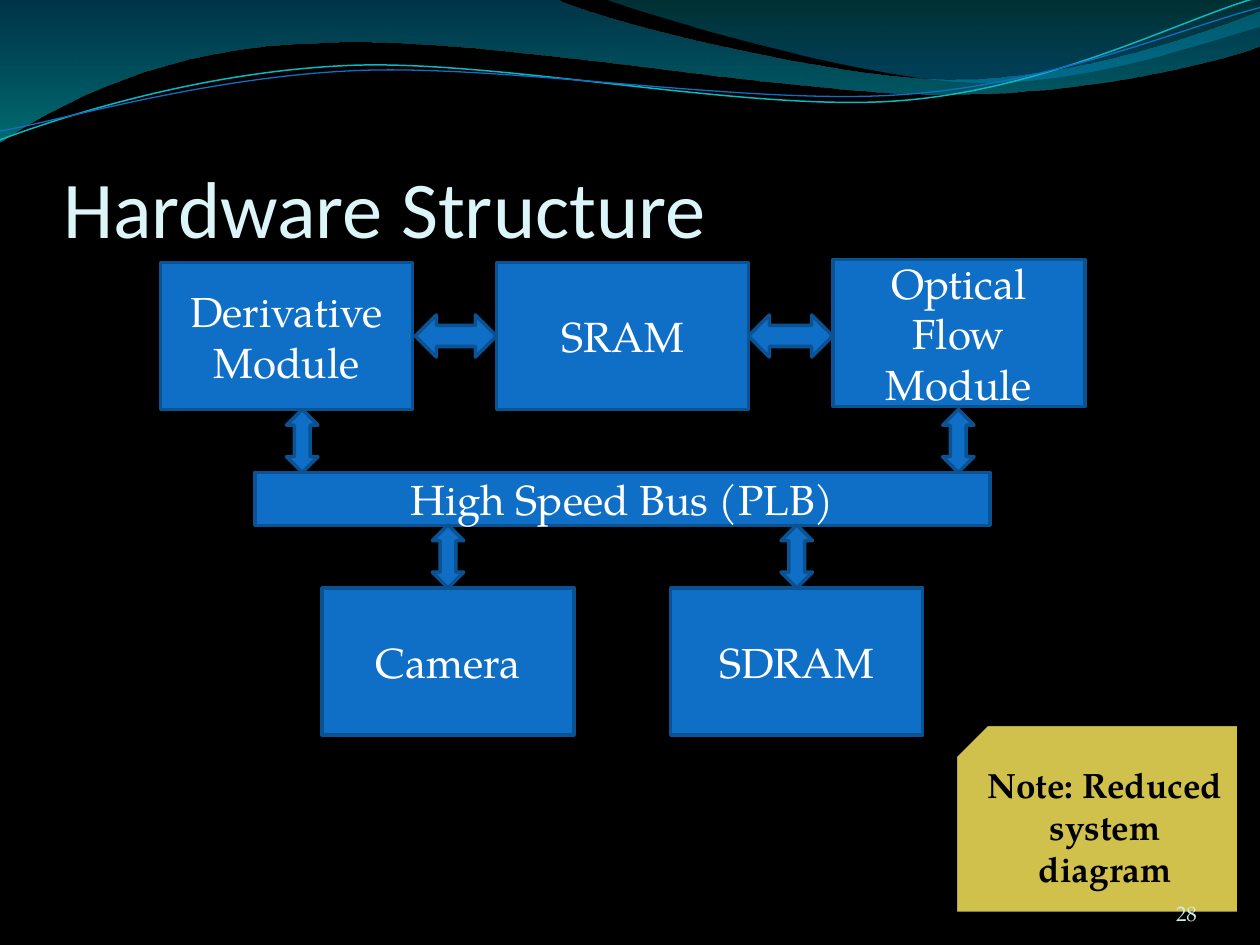
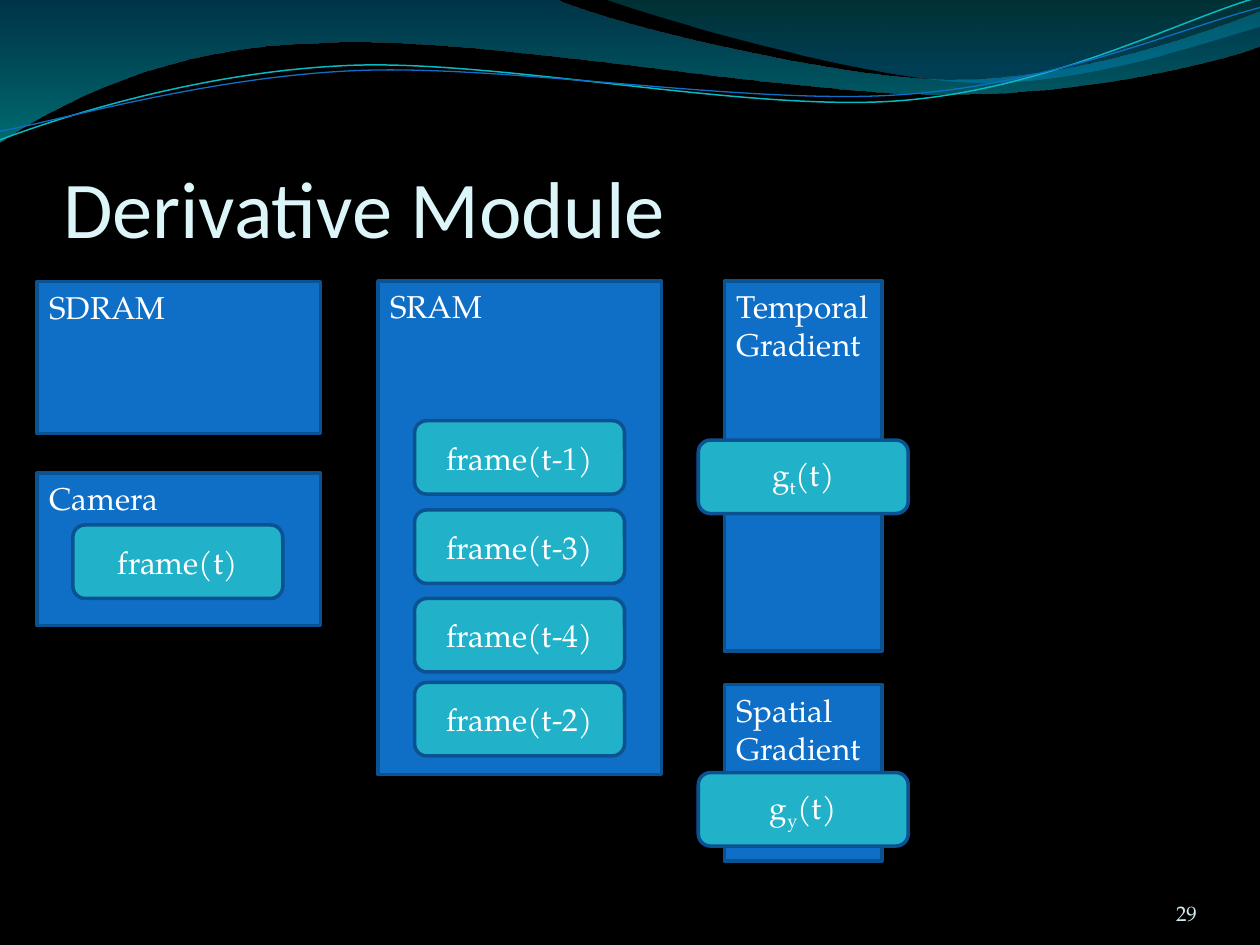
from math import cos, radians, sin

from lxml import etree
from pptx import Presentation
from pptx.dml.color import RGBColor
from pptx.enum.shapes import MSO_SHAPE
from pptx.enum.text import MSO_ANCHOR, MSO_AUTO_SIZE, PP_ALIGN
from pptx.oxml.ns import qn
from pptx.util import Pt

RECT, ROUND = MSO_SHAPE.RECTANGLE, MSO_SHAPE.ROUNDED_RECTANGLE
UP_DOWN, LEFT_RIGHT = MSO_SHAPE.UP_DOWN_ARROW, MSO_SHAPE.LEFT_RIGHT_ARROW
SNIP = MSO_SHAPE.SNIP_1_RECTANGLE
TOP, MIDDLE, BOTTOM = MSO_ANCHOR.TOP, MSO_ANCHOR.MIDDLE, MSO_ANCHOR.BOTTOM
LEFT, CENTER, RIGHT = PP_ALIGN.LEFT, PP_ALIGN.CENTER, PP_ALIGN.RIGHT
NO_FIT = MSO_AUTO_SIZE.NONE

BLACK, WHITE, BLUE, NAVY, TEAL = "000000", "FFFFFF", "0F6FC6", "0B5292", "21B2C9"
AQUA, SAND, TITLE, NUMBER = "0AB8BF", "D0C04C", "DBF5F9", "D1EAEE"
HEAD_FONT, BODY_FONT = "Calibri", "TeX Gyre Pagella"
TILT = 2.7

BROAD_WAVE = [(0, 0), (316.8, -0.7),
              (342.7, 12.2, 478.1, 45.4, 545.8, 45.4),
              (614.2, 45.4, 689.8, 18.7, 720, 6.5), (720.7, 25.9),
              (707.8, 31.7, 626.4, 54.7, 537.1, 54),
              (447.8, 54, 275, 20.2, 185, 24.5),
              (92.9, 25.9, 33.1, 59.8, -0.7, 81.4), (0, 0)]
RIGHT_WAVE = [(344.9, -0.7), (366.5, 7.9, 491, 44.6, 553.7, 46.8),
              (616.3, 49.7, 691.9, 23, 720, 15.1), (720, 0), (344.9, -0.7)]
AQUA_LINE = [(0, 79.9), (34.6, 67, 113.8, 41, 199.4, 37.4),
             (284.4, 33.8, 427, 64.1, 513.4, 57.6),
             (599.8, 51.1, 675.4, 10.8, 718.6, -1.4)]
BLUE_LINE = [(0, 74.9), (33.8, 69.1, 118.1, 43.9, 203.8, 40.3),
             (290.2, 36.7, 429.8, 60.5, 516.2, 54),
             (601.9, 48.2, 677.5, 15.1, 720, 4.3)]


def rgb(value):
    return RGBColor.from_string(value)


def turn(x, y, cx, cy, degrees):
    a = radians(degrees)
    dx, dy = x - cx, y - cy
    return cx + dx * cos(a) - dy * sin(a), cy + dx * sin(a) + dy * cos(a)


class Deck:
    def __init__(self):
        self.prs = Presentation()
        self.prs.slide_width, self.prs.slide_height = Pt(720), Pt(540)
        fill = self.prs.slide_master.background.fill
        fill.solid()
        fill.fore_color.rgb = rgb(BLACK)

    def slide(self, title):
        self.s = self.prs.slides.add_slide(self.prs.slide_layouts[5])
        self.wave(BROAD_WAVE, [(0, "0074A1", 45), (1, "00C6CF", 55)])
        self.wave(RIGHT_WAVE, [(0, "00A1A9", 30), (0.8, "008BBF", 45)])
        self.curve(AQUA_LINE, AQUA, 0.85, 41.4)
        self.curve(BLUE_LINE, BLUE, 0.75, 42.5)
        sp = self.s.shapes.title
        sp.left, sp.top, sp.width, sp.height = Pt(36), Pt(55.4), Pt(648), Pt(90)
        self.margins(sp, 0, 3.6, 0, 0)
        self.text(sp, title, 46, TITLE, BOTTOM, LEFT, font=HEAD_FONT)

    def freeform(self, segments, close, tilt=0, middle=0):
        points = [turn(*seg[i:i + 2], 359.3, middle, tilt)
                  for seg in segments for i in range(0, len(seg), 2)]
        points = [(Pt(x), Pt(y)) for x, y in points]
        builder = self.s.shapes.build_freeform(*points[0])
        builder.add_line_segments(points[1:], close=close)
        sp = builder.convert_to_shape()
        sp.shadow.inherit = False
        lines = iter(list(sp._element.spPr.iter(qn("a:lnTo"))))
        for seg in segments[1:]:
            first = next(lines)
            if len(seg) == 6:
                first.tag = qn("a:cubicBezTo")
                for _ in range(2):
                    control = next(lines)
                    first.append(control[0])
                    control.getparent().remove(control)
        return sp

    def wave(self, segments, stops):
        sp = self.freeform(segments, True)
        sp.line.fill.background()
        sp.fill.gradient()
        sp.fill.gradient_angle = 270
        for stop, (position, color, _) in zip(sp.fill.gradient_stops, stops):
            stop.position = position
            stop.color.rgb = rgb(color)
        for clr, (_, _, opacity) in zip(sp._element.spPr.iter(qn("a:srgbClr")), stops):
            etree.SubElement(clr, qn("a:alpha")).set("val", str(opacity * 1000))

    def curve(self, segments, color, width, middle):
        sp = self.freeform(segments, False, TILT, middle)
        sp.rotation = -TILT
        sp.fill.background()
        sp.line.color.rgb = rgb(color)
        sp.line.width = Pt(width)

    def margins(self, sp, left, top, right, bottom):
        tf = sp.text_frame
        tf.margin_left, tf.margin_top = Pt(left), Pt(top)
        tf.margin_right, tf.margin_bottom = Pt(right), Pt(bottom)

    def text(self, sp, text, size, color, anchor, align, bold=False, font=BODY_FONT):
        tf = sp.text_frame
        tf.word_wrap, tf.auto_size, tf.vertical_anchor = True, NO_FIT, anchor
        p = tf.paragraphs[0]
        p.alignment = align
        for i, part in enumerate(text.split("_")):
            r = p.add_run()
            r.text = part
            r.font.name, r.font.size, r.font.bold = font, Pt(size), bold
            r.font.color.rgb = rgb(color)
            if i % 2:
                r._r.get_or_add_rPr().set("baseline", "-25000")

    def shape(self, kind, x, y, w, h, fill=BLUE, line=NAVY):
        sp = self.s.shapes.add_shape(kind, Pt(x), Pt(y), Pt(w), Pt(h))
        sp.shadow.inherit = False
        sp.fill.solid()
        sp.fill.fore_color.rgb = rgb(fill)
        sp.line.color.rgb = rgb(line)
        sp.line.width = Pt(2)
        return sp

    def block(self, text, x, y, w=144, h=84):
        self.text(self.shape(RECT, x, y, w, h), text, 24, WHITE, MIDDLE, CENTER)

    def panel(self, text, x, y, w, h):
        self.text(self.shape(RECT, x, y, w, h), text, 18, WHITE, TOP, LEFT)

    def chip(self, text, x, y):
        sp = self.shape(ROUND, x, y, 120, 42, TEAL)
        self.text(sp, text, 18, WHITE, MIDDLE, CENTER)

    def note(self, text, x, y, w, h):
        sp = self.shape(SNIP, x, y, w, h, SAND, BLACK)
        sp._element.spPr.find(qn("a:xfrm")).set("flipH", "1")
        self.text(sp, text, 20, BLACK, MIDDLE, CENTER, bold=True)

    def number(self, text):
        sp = self.s.shapes.add_textbox(Pt(624), Pt(500.4), Pt(60), Pt(28.8))
        self.margins(sp, 0, 0, 0, 0)
        self.text(sp, text, 12, NUMBER, BOTTOM, RIGHT)


def hardware_structure(deck):
    deck.slide("Hardware Structure")
    modules = [("Derivative Module", 150), ("SRAM", 150), ("Optical Flow Module", 148.3)]
    for i, (name, y) in enumerate(modules):
        deck.block(name, 91.7 + 192.1 * i, y)
    deck.block("High Speed Bus (PLB)", 145.6, 270, 420, 30.2)
    for name, x in [("Camera", 184), ("SDRAM", 383.3)]:
        deck.block(name, x, 336)
        deck.shape(UP_DOWN, x + 63, 300, 18, 36)
    for x in (163.7, 538.6):
        deck.shape(UP_DOWN, x, 234, 18, 36)
    for x, w in [(237.4, 46.3), (427.7, 48.2)]:
        deck.shape(LEFT_RIGHT, x, 180, w, 24)
    deck.note("Note: Reduced system diagram", 546, 414, 162, 108)
    deck.number("28")


def derivative_module(deck):
    deck.slide("Derivative Module")
    for name, x, y, w, h in [("SDRAM", 21.1, 160.8, 162, 87),
                             ("Camera", 21.1, 270.4, 162, 87),
                             ("SRAM", 216, 160.6, 162, 282),
                             ("Temporal Gradient", 414, 160.6, 90, 211.5),
                             ("Spatial Gradient", 414, 391.2, 90, 100.8)]:
        deck.panel(name, x, y, w, h)
    for name, x, y in [("frame(t)", 41.6, 300),
                       ("frame(t-1)", 236.9, 240.4),
                       ("frame(t-3)", 236.9, 291.4),
                       ("frame(t-4)", 236.9, 342),
                       ("frame(t-2)", 236.9, 390),
                       ("g_t_(t)", 399, 251.5),
                       ("g_y_(t)", 399, 441.5)]:
        deck.chip(name, x, y)
    deck.number("29")


def main():
    deck = Deck()
    hardware_structure(deck)
    derivative_module(deck)
    deck.prs.save("out.pptx")


if __name__ == "__main__":
    main()
